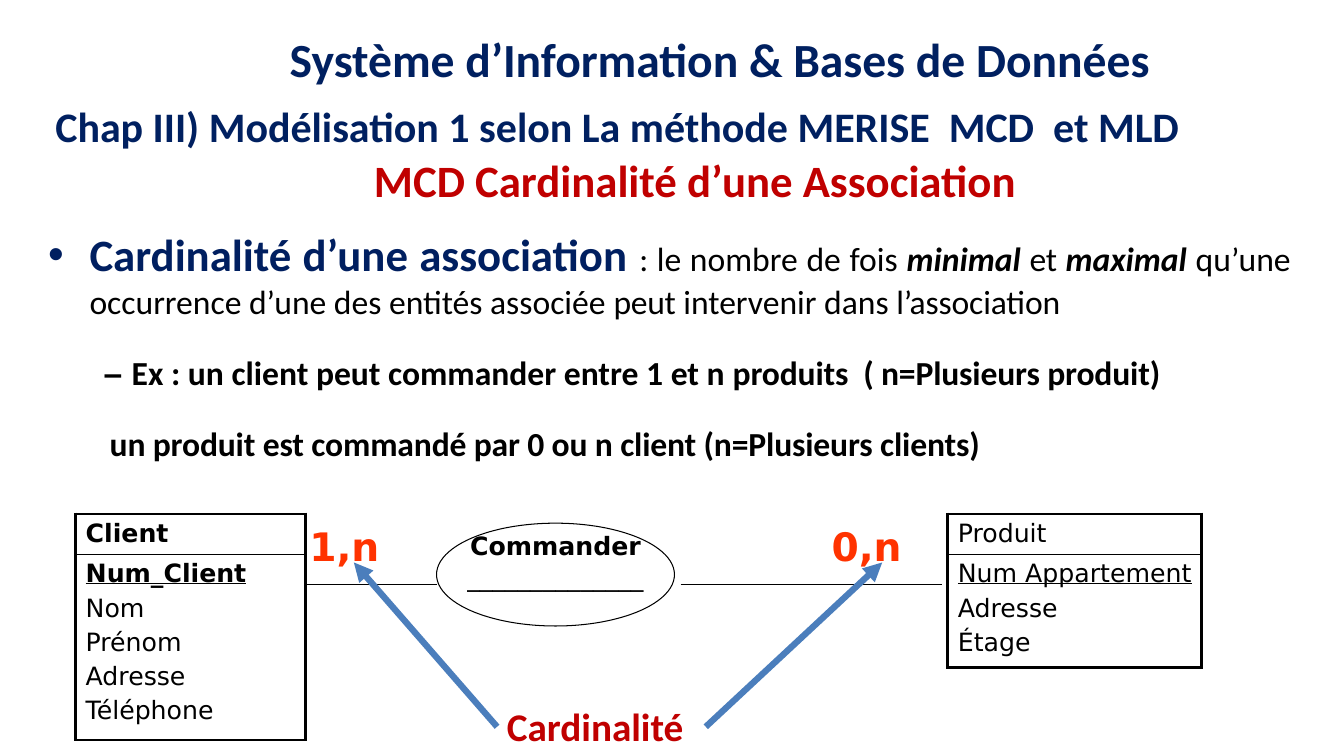
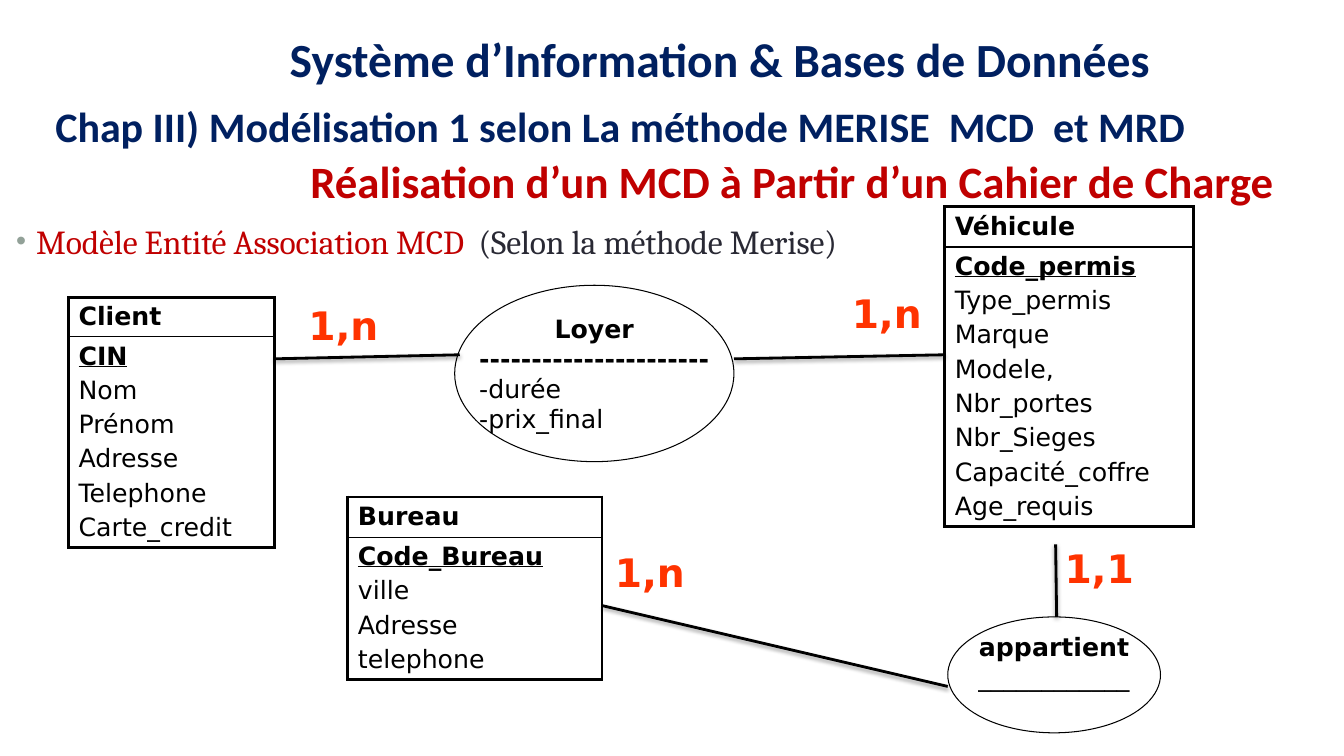
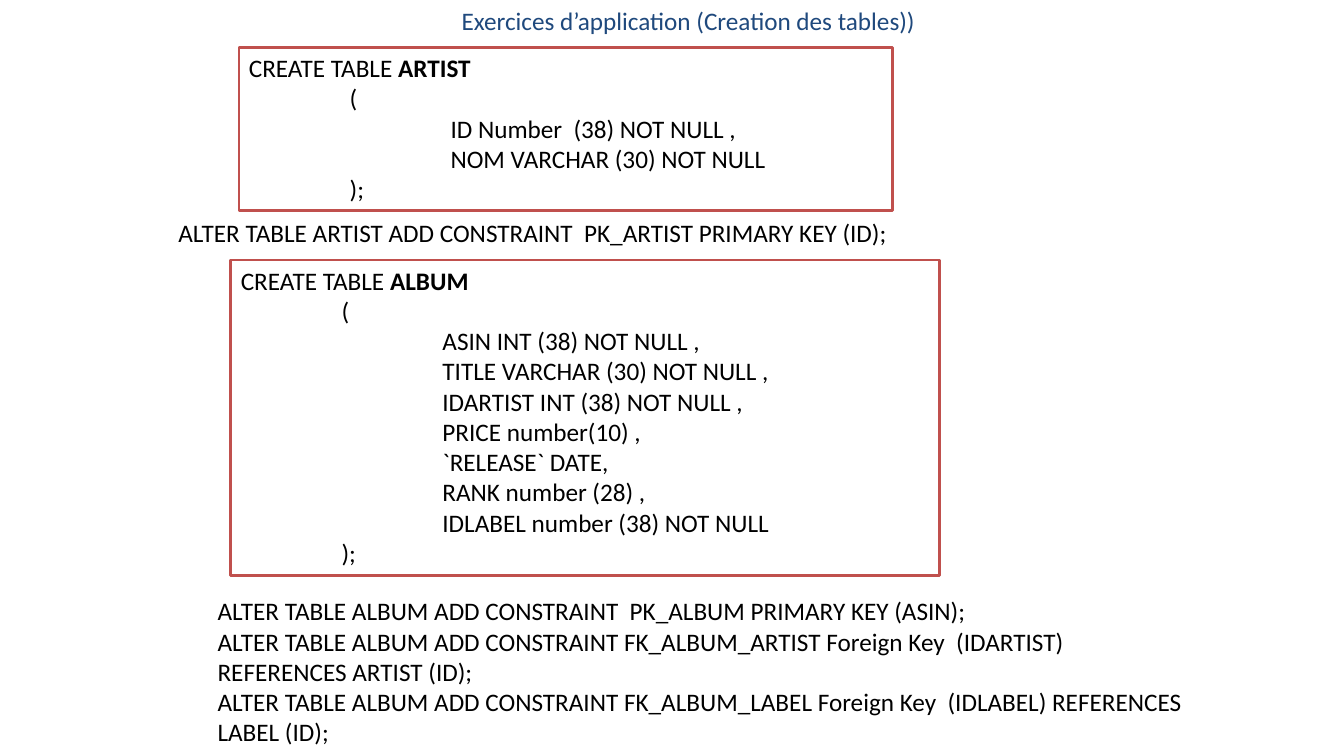
import pptx
import pptx.chart
import pptx.dml.color
import pptx.enum.shapes
import pptx.enum.text
import pptx.oxml
import pptx.oxml.ns
import pptx.util
import lxml.etree

Inches = pptx.util.Inches
Pt = pptx.util.Pt
Align = pptx.enum.text.PP_ALIGN
Anchor = pptx.enum.text.MSO_ANCHOR
Shapes = pptx.enum.shapes.MSO_SHAPE
qn = pptx.oxml.ns.qn


def color(value):
    return pptx.dml.color.RGBColor.from_string(value)


def child(parent, tag, **attributes):
    element = lxml.etree.SubElement(parent, qn(tag))
    for name, value in attributes.items():
        element.set(name, str(value))
    return element


class Deck:
    NAVY = "002060"
    RED = "C00000"
    ORANGE = "FF3300"
    BLUE = "4B7EBC"
    BRICK = "C0504D"
    BLACK = "000000"
    WHITE = "FFFFFF"
    BODY = "Calibri"
    DIAGRAM = "DejaVu Sans"

    def __init__(self):
        self.presentation = pptx.Presentation()
        self.presentation.slide_width = Inches(13.33)
        self.presentation.slide_height = Inches(7.5)
        self.slide = None

    def new_slide(self):
        self.slide = self.presentation.slides.add_slide(self.presentation.slide_layouts[6])

    def run(self, paragraph, text, size=18, font=BODY, ink=BLACK, bold=False,
            italic=False, underline=False, spacing=0):
        run = paragraph.add_run()
        run.text = text
        run.font.size = Pt(size)
        run.font.name = font
        run.font.color.rgb = color(ink)
        run.font.bold = bold
        run.font.italic = italic
        run.font.underline = underline
        if spacing:
            run.font._element.set("spc", str(round(spacing * 100)))

    def paragraph(self, frame, runs, first, align=Align.LEFT, before=0, line=None,
                  margin=0, hanging=0, bullet=None, **style):
        paragraph = frame.paragraphs[0] if first else frame.add_paragraph()
        paragraph.alignment = align
        if line:
            paragraph.line_spacing = line
        if before:
            paragraph.space_before = Pt(before)
        properties = paragraph._p.get_or_add_pPr()
        properties.set("marL", str(Inches(margin)))
        properties.set("indent", str(-Inches(hanging)))
        if bullet:
            ink, percent = bullet
            child(child(properties, "a:buClr"), "a:srgbClr", val=ink)
            child(properties, "a:buSzPct", val=percent * 1000)
            child(properties, "a:buFont", typeface="Arial")
            child(properties, "a:buChar", char="•")
        if isinstance(runs, str):
            runs = [(runs, {})]
        for text, changes in runs:
            self.run(paragraph, text, **{**style, **changes})

    def fill_frame(self, frame, paragraphs, **style):
        for index, (runs, options) in enumerate(paragraphs):
            self.paragraph(frame, runs, index == 0, **{**style, **options})

    def text(self, box, paragraphs, wrap=True, grow=True, inset=None,
             anchor=Anchor.TOP, **style):
        shape = self.slide.shapes.add_textbox(*map(Inches, box))
        frame = shape.text_frame
        frame.word_wrap = wrap
        frame.vertical_anchor = anchor
        if grow:
            frame.auto_size = pptx.enum.text.MSO_AUTO_SIZE.SHAPE_TO_FIT_TEXT
        if inset is not None:
            frame.margin_left = frame.margin_right = Inches(inset)
            frame.margin_top = frame.margin_bottom = Inches(inset)
        if isinstance(paragraphs, str):
            paragraphs = [(paragraphs, {})]
        self.fill_frame(frame, paragraphs, **style)

    def header(self, chapter, heading, heading_box):
        self.text((0.45, 0.95, 12.48, 0.61), chapter, size=30, ink=self.NAVY, bold=True)
        self.text((1.39, 0.12, 11.5, 0.8), "Système d’Information & Bases de Données",
                  grow=False, anchor=Anchor.BOTTOM, align=Align.CENTER, line=0.9,
                  size=34, ink=self.NAVY, bold=True)
        self.text(heading_box, heading, wrap=False, size=32, ink=self.RED, bold=True)

    def shape(self, preset, box, line, width, fill=None):
        shape = self.slide.shapes.add_shape(preset, *map(Inches, box))
        shape.shadow.inherit = False
        if fill:
            shape.fill.solid()
            shape.fill.fore_color.rgb = color(fill)
        else:
            shape.fill.background()
        shape.line.color.rgb = color(line)
        shape.line.width = Pt(width)
        return shape

    def association(self, box, name, rule, attributes=(), bottom=0.05):
        frame = self.shape(Shapes.OVAL, box, self.BLACK, 0.75).text_frame
        frame.word_wrap = False
        frame.vertical_anchor = Anchor.MIDDLE
        frame.margin_bottom = Inches(bottom)
        paragraphs = [(name, {"align": Align.CENTER, "bold": True}),
                      (rule, {"align": Align.CENTER, "bold": bool(attributes)})]
        paragraphs += [(attribute, {}) for attribute in attributes]
        self.fill_frame(frame, paragraphs, font=self.DIAGRAM)

    def code(self, box, table_name, columns):
        frame = self.shape(Shapes.RECTANGLE, box, self.BRICK, 2, self.WHITE).text_frame
        frame.word_wrap = True
        frame.vertical_anchor = Anchor.TOP
        paragraphs = [([("CREATE TABLE ", {}), (table_name, {"bold": True})], {}),
                      ("(", {"margin": 1})]
        paragraphs += [(column, {"margin": 2}) for column in columns]
        paragraphs.append((");", {"margin": 1}))
        self.fill_frame(frame, paragraphs)

    def entity(self, left, top, width, heights, name, attributes, bold=True):
        graphic = self.slide.shapes.add_table(
            2, 1, Inches(left), Inches(top), Inches(width), Inches(sum(heights)))
        table = graphic.table
        table.first_row = table.horz_banding = False
        key, *others = attributes
        contents = [
            [(name, {"bold": bold})],
            [(key, {"bold": bold, "underline": True})] + [(other, {}) for other in others],
        ]
        borders = [(2.25, 2.25, 2.25, 1), (2.25, 2.25, 1, 2.25)]
        for index, paragraphs in enumerate(contents):
            table.rows[index].height = Inches(heights[index])
            cell = table.cell(index, 0)
            self.fill_frame(cell.text_frame, paragraphs, font=self.DIAGRAM, before=3.6)
            properties = cell._tc.get_or_add_tcPr()
            for side, width in zip("LRTB", borders[index]):
                border = child(properties, "a:ln" + side, w=Pt(width))
                child(child(border, "a:solidFill"), "a:srgbClr", val=self.BLACK)
            cell.fill.background()

    def line(self, start, end, ink=BLACK, width=0.75, arrow=False, shadow=False):
        connector = self.slide.shapes.add_connector(
            pptx.enum.shapes.MSO_CONNECTOR.STRAIGHT, *map(Inches, start + end))
        connector.line.color.rgb = color(ink)
        connector.line.width = Pt(width)
        if arrow:
            child(connector.line._get_or_add_ln(), "a:tailEnd", type="triangle")
        effects = child(connector._element.spPr, "a:effectLst")
        if shadow:
            outer = child(effects, "a:outerShdw", blurRad=Pt(3.1), dist=Pt(1.6),
                          dir=90 * 60000, rotWithShape=0)
            child(child(outer, "a:srgbClr", val=self.BLACK), "a:alpha", val=38000)

    def cardinality(self, left, top, text):
        self.text((left, top, 1.13, 0.57), text, size=28, font=self.DIAGRAM,
                  ink=self.ORANGE, bold=True)


def cardinality_slide(deck):
    deck.new_slide()
    strong = {"bold": True, "italic": True}
    definition = [
        ("Cardinalité d’une association ", {"size": 32, "ink": "001F60", "bold": True}),
        (": le nombre de fois ", {}),
        ("minimal ", strong),
        ("et ", {"spacing": -0.2}),
        ("maximal ", strong),
        ("qu’une occurrence d’une des entités associée ", {}),
        ("peut ", {"spacing": -0.2}),
        ("intervenir dans ", {}),
        ("l’association", {"spacing": -0.1}),
    ]
    example = [
        ("– ", {"font": "Arial"}),
        ("Ex : un client peut commander entre 1 et n ", {}),
        ("produits  ( n=Plusieurs produit)", {"spacing": -0.1}),
    ]
    deck.text((0.36, 2.2, 12.54, 2.47), [
        (definition, {"margin": 0.43, "hanging": 0.41, "bullet": ("001F60", 100)}),
        (example, {"margin": 0.57, "before": 22.2, "bold": True}),
        ("un produit est commandé par 0 ou n client (n=Plusieurs clients)",
         {"margin": 0.63, "before": 22.2, "bold": True, "spacing": -0.1}),
    ], align=Align.JUSTIFY, size=24)
    deck.entity(9.4, 5.1, 2.52, (0.4, 1.12), "Produit",
                ["Num Appartement", "Adresse", "Étage"], bold=False)
    deck.association((4.33, 5.19, 2.36, 1.02), "Commander", "______________", bottom=0.32)
    deck.entity(0.75, 5.1, 2.28, (0.4, 1.84), "Client",
                ["Num_Client", "Nom", "Prénom", "Adresse", "Téléphone"])
    deck.line((3.03, 5.8), (4.33, 5.8))
    deck.line((6.75, 5.8), (9.34, 5.8))
    deck.cardinality(2.97, 5.13, "1,n")
    deck.cardinality(8.15, 5.13, "0,n")
    deck.header("Chap III) Modélisation 1 selon La méthode MERISE  MCD  et MLD",
                "MCD Cardinalité d’une Association", (3.61, 1.47, 6.84, 0.64))
    for start, end in [((4.93, 7.21), (3.51, 5.58)), ((7, 7.21), (8.75, 5.58))]:
        deck.line(start, end, deck.BLUE, 4.5, arrow=True)
    deck.text((4.93, 6.92, 2.06, 0.57), "Cardinalité", wrap=False, size=28,
              ink=deck.RED, bold=True)


def model_slide(deck):
    deck.new_slide()
    deck.entity(9.37, 2.05, 2.47, (0.4, 1.12), "Véhicule",
                ["Code_permis", "Type_permis", "Marque", "Modele,", "Nbr_portes",
                 "Nbr_Sieges", "Capacité_coffre", "Age_requis"])
    deck.association((4.51, 2.83, 2.77, 1.75), "Loyer", "-" * 22,
                     ["-durée", "-prix_final"])
    deck.entity(0.68, 2.95, 2.04, (0.33, 1.5), "Client",
                ["CIN", "Nom", "Prénom", "Adresse", "Telephone", "Carte_credit"])
    deck.entity(3.45, 4.93, 2.52, (0.4, 1.12), "Bureau",
                ["Code_Bureau", "ville", "Adresse", "telephone"])
    deck.association((9.4, 6.12, 2.11, 1.15), "appartient", "____________", bottom=0.32)
    for start, end in [((2.72, 3.56), (4.56, 3.52)), ((7.28, 3.56), (9.37, 3.52)),
                       ((5.98, 6.01), (9.4, 6.81)), ((10.47, 5.4), (10.48, 6.12))]:
        deck.line(start, end, width=2, shadow=True)
    for left, top, text in [(2.96, 2.94, "1,n"), (8.35, 2.82, "1,n"),
                            (6, 5.39, "1,n"), (10.46, 5.35, "1,1")]:
        deck.cardinality(left, top, text)
    deck.header("Chap III) Modélisation 1 selon La méthode MERISE  MCD  et MRD",
                "Réalisation d’un MCD à Partir d’un Cahier de Charge",
                (2.98, 1.48, 9.95, 0.64))
    caption = [("Modèle Entité Association MCD  ", {"ink": deck.RED}),
               ("(Selon la méthode Merise)", {"ink": "292934"})]
    deck.text((0.15, 2.19, 10.96, 0.41),
              [(caption, {"margin": 0.21, "hanging": 0.2, "bullet": ("92A198", 85)})],
              inset=0, line=Pt(28.6), size=24, font="Cambria", spacing=-0.1)


def exercise_slide(deck):
    deck.new_slide()
    deck.code((2.29, 2.58, 7.03, 3.13), "ALBUM", [
        "ASIN INT (38) NOT NULL ,",
        "TITLE VARCHAR (30) NOT NULL ,",
        "IDARTIST INT (38) NOT NULL ,",
        "PRICE number(10) ,",
        "`RELEASE` DATE,",
        "RANK number (28) ,",
        "IDLABEL number (38) NOT NULL",
    ])
    deck.code((2.37, 0.47, 6.48, 1.62), "ARTIST", [
        "ID Number  (38) NOT NULL ,",
        "NOM VARCHAR (30) NOT NULL",
    ])
    constraints = [
        "PK_ALBUM PRIMARY KEY (ASIN);",
        "FK_ALBUM_ARTIST Foreign Key  (IDARTIST) REFERENCES ARTIST (ID);",
        "FK_ALBUM_LABEL Foreign Key  (IDLABEL) REFERENCES LABEL (ID);",
    ]
    constraints[0] = " " + constraints[0]
    deck.text((2.06, 5.86, 9.77, 1.62),
              [("ALTER TABLE ALBUM ADD CONSTRAINT " + constraint, {})
               for constraint in constraints])
    deck.text((1.67, 2.11, 8.28, 0.4),
              "ALTER TABLE ARTIST ADD CONSTRAINT  PK_ARTIST PRIMARY KEY (ID);")
    deck.text((4.48, 0, 4.76, 0.4), "Exercices d’application (Creation des tables))",
              wrap=False, ink="1F497D")


def main():
    deck = Deck()
    cardinality_slide(deck)
    model_slide(deck)
    exercise_slide(deck)
    deck.presentation.save("out.pptx")


if __name__ == "__main__":
    main()
